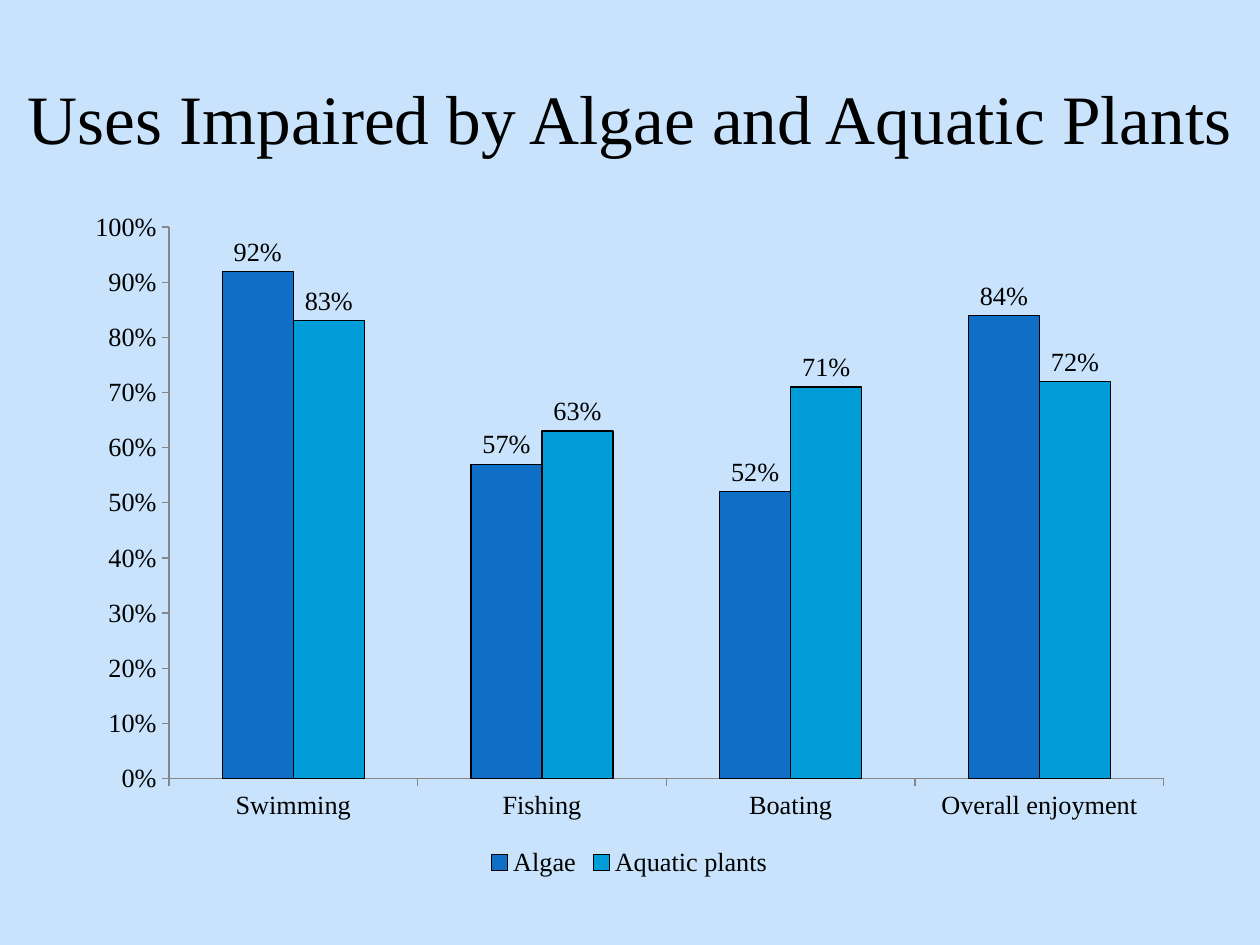
from pptx import Presentation
from pptx.chart.data import CategoryChartData
from pptx.dml.color import RGBColor
from pptx.enum.chart import XL_CHART_TYPE, XL_LABEL_POSITION, XL_LEGEND_POSITION, XL_TICK_MARK
from pptx.enum.text import MSO_ANCHOR, MSO_AUTO_SIZE, PP_ALIGN
from pptx.util import Emu, Pt

PX_PER_INCH = 126
FONT = "Times New Roman"
BLACK = "000000"
BACKGROUND = "C8E3FB"
AXIS_GREY = "868686"
USES = ["Swimming", "Fishing", "Boating", "Overall enjoyment"]
SERIES = [
    ("Algae", "0F6FC6", [0.92, 0.57, 0.52, 0.84]),
    ("Aquatic plants", "009DD9", [0.83, 0.63, 0.71, 0.72]),
]


def px(length):
    """Turn a length in pixels into EMU."""
    return Emu(round(length * 914400 / PX_PER_INCH))


def color(hex_string):
    """Turn a hex string into a colour."""
    return RGBColor.from_string(hex_string)


def format_font(font, size, font_color=BLACK):
    """Set the face, size and colour of a font."""
    font.name = FONT
    font.size = Pt(size)
    font.color.rgb = color(font_color)


def write_text(text_frame, text, size, align=PP_ALIGN.CENTER, anchor=MSO_ANCHOR.MIDDLE):
    """Write one formatted paragraph into a text frame."""
    text_frame.word_wrap = True
    text_frame.auto_size = MSO_AUTO_SIZE.NONE
    text_frame.vertical_anchor = anchor
    paragraph = text_frame.paragraphs[0]
    paragraph.alignment = align
    run = paragraph.add_run()
    run.text = text
    format_font(run.font, size)


def set_line(line, hex_string):
    """Give a line its colour and a width of 0.75 points."""
    line.color.rgb = color(hex_string)
    line.width = Pt(0.75)


def add_title(slide, text):
    """Place and fill the title placeholder."""
    title = slide.shapes.title
    title.left, title.top, title.width, title.height = px(0), px(38), px(1260), px(158)
    write_text(title.text_frame, text, size=39.6)


def format_axis(axis):
    """Show outward ticks and a thin grey line, without gridlines."""
    axis.has_major_gridlines = False
    axis.major_tick_mark = XL_TICK_MARK.OUTSIDE
    axis.minor_tick_mark = XL_TICK_MARK.NONE
    set_line(axis.format.line, AXIS_GREY)


def format_series(series, fill_color):
    """Colour the columns of a series and label them with percentages."""
    series.format.fill.solid()
    series.format.fill.fore_color.rgb = color(fill_color)
    set_line(series.format.line, BLACK)
    labels = series.data_labels
    labels.show_value = True
    labels.position = XL_LABEL_POSITION.OUTSIDE_END
    labels.number_format = "0%"
    labels.number_format_is_linked = False


def add_column_chart(slide):
    """Add the clustered columns of impaired uses."""
    chart_data = CategoryChartData(number_format="0%")
    chart_data.categories = USES
    for name, _, values in SERIES:
        chart_data.add_series(name, values)
    chart = slide.shapes.add_chart(
        XL_CHART_TYPE.COLUMN_CLUSTERED, px(73), px(199), px(1113), px(683), chart_data
    ).chart
    format_font(chart.font, 15)
    chart.has_title = False
    chart.has_legend = True
    chart.legend.position = XL_LEGEND_POSITION.BOTTOM
    chart.legend.include_in_layout = False

    format_axis(chart.category_axis)
    value_axis = chart.value_axis
    format_axis(value_axis)
    value_axis.minimum_scale, value_axis.maximum_scale, value_axis.major_unit = 0, 1, 0.1
    value_axis.tick_labels.number_format = "0%"
    value_axis.tick_labels.number_format_is_linked = False

    plot = chart.plots[0]
    plot.gap_width = 150
    plot.overlap = 0
    plot.vary_by_categories = False
    for series, (_, fill_color, _) in zip(plot.series, SERIES):
        format_series(series, fill_color)


def main():
    """Build the slide and save it."""
    presentation = Presentation()
    presentation.slide_width, presentation.slide_height = px(1260), px(945)
    slide = presentation.slides.add_slide(presentation.slide_layouts[5])
    slide.background.fill.solid()
    slide.background.fill.fore_color.rgb = color(BACKGROUND)
    add_title(slide, "Uses Impaired by Algae and Aquatic Plants")
    add_column_chart(slide)
    presentation.save("out.pptx")


if __name__ == "__main__":
    main()
